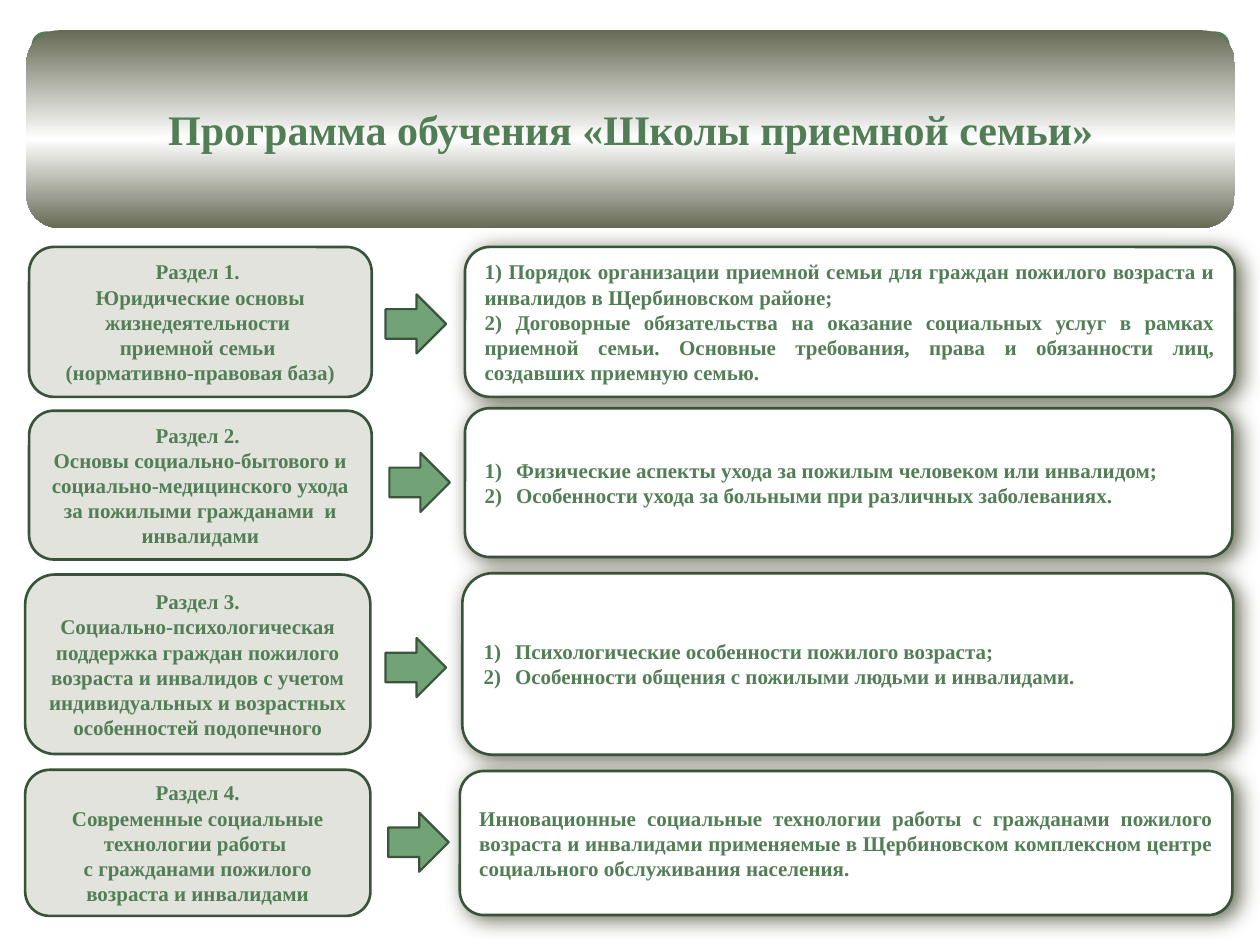
from copy import deepcopy
from lxml import etree
from pptx import Presentation
from pptx.dml.color import RGBColor
from pptx.enum.shapes import MSO_SHAPE
from pptx.enum.text import MSO_ANCHOR, PP_ALIGN
from pptx.oxml.ns import qn
from pptx.util import Pt

ROUND = MSO_SHAPE.ROUNDED_RECTANGLE
ARROW = MSO_SHAPE.RIGHT_ARROW
MIDDLE = MSO_ANCHOR.MIDDLE
CENTER, JUSTIFY = PP_ALIGN.CENTER, PP_ALIGN.JUSTIFY

GREEN = RGBColor(0x52, 0x7E, 0x56)
DARK = RGBColor(0x37, 0x54, 0x39)
EDGE = RGBColor(0x3B, 0x55, 0x3D)
LEAF = RGBColor(0x72, 0xA3, 0x76)
PALE = RGBColor(0xE2, 0xE3, 0xDC)
OLIVE = RGBColor(0x67, 0x6A, 0x55)
WHITE = RGBColor(0xFF, 0xFF, 0xFF)

FONT = "Times New Roman"
BAND = (15.1, 17.3, 690.5, 113)

# Each row: section box and text, arrow corner, topic box and text, numbered or not
ROWS = [
    ((16.6, 141.1, 195.8, 85.7),
     ["Раздел 1. ", "Юридические основы жизнедеятельности ",
      "приемной семьи ", "(нормативно-правовая база)"],
     (220.3, 168.2),
     (265.7, 141.1, 439.9, 85.7),
     ["1) Порядок организации приемной семьи для граждан пожилого возраста "
      "и инвалидов в Щербиновском районе;",
      "2) Договорные обязательства на оказание социальных услуг в рамках "
      "приемной семьи. Основные требования, права и обязанности лиц, "
      "создавших приемную семью."], False),
    ((16.6, 234.7, 195.8, 85),
     ["Раздел 2. ",
      "Основы социально-бытового и социально-медицинского ухода "
      "за пожилыми гражданами  и инвалидами"],
     (222.5, 258.8),
     (265.7, 233.3, 438.5, 85),
     ["Физические аспекты ухода за пожилым человеком или инвалидом;",
      "Особенности ухода за больными при различных заболеваниях."], True),
    ((14.4, 328.3, 197.3, 102.6),
     ["Раздел 3.",
      "Социально-психологическая поддержка граждан пожилого возраста "
      "и инвалидов с учетом индивидуальных и возрастных "
      "особенностей подопечного"],
     (220.3, 364.6),
     (264.2, 327.6, 440.6, 103.7),
     ["Психологические особенности пожилого возраста;",
      "Особенности общения с пожилыми людьми и инвалидами."], True),
    ((14.4, 439.9, 197.3, 83.5),
     ["Раздел 4.", "Современные социальные технологии работы ",
      "с гражданами пожилого возраста и инвалидами"],
     (221.8, 464.4),
     (262.8, 440.6, 441.4, 82.3),
     ["Инновационные социальные технологии работы с гражданами пожилого "
      "возраста и инвалидами применяемые в Щербиновском комплексном центре "
      "социального обслуживания населения."], False),
]

deck = Presentation()
deck.slide_width, deck.slide_height = Pt(720), Pt(540)
slide = deck.slides.add_slide(deck.slide_layouts[5])


def draw(kind, box, fill=None, line=None, width=1.5):
    shape = slide.shapes.add_shape(kind, *map(Pt, box))
    shape.shadow.inherit = False
    if fill is not None:
        shape.fill.solid()
        shape.fill.fore_color.rgb = fill
    if line is None:
        shape.line.fill.background()
    else:
        shape.line.color.rgb = line
        shape.line.width = Pt(width)
    return shape


def write(shape, texts, align, size=12, auto=False):
    """Fill the shape with bold green paragraphs, numbered 1), 2) if auto."""
    frame = shape.text_frame
    frame.word_wrap = True
    frame.vertical_anchor = MIDDLE
    for i, text in enumerate(texts):
        para = frame.add_paragraph() if i else frame.paragraphs[0]
        para.alignment = align
        run = para.add_run()
        run.text = text
        run.font.name = FONT
        run.font.size = Pt(size)
        run.font.bold = True
        run.font.color.rgb = GREEN
        if auto:
            props = para._p.get_or_add_pPr()
            props.set("marL", str(Pt(18)))
            props.set("indent", str(-Pt(18)))
            etree.SubElement(props, qn("a:buFont"), typeface="+mj-lt")
            etree.SubElement(props, qn("a:buAutoNum"), type="arabicParenR")


# Green panel whose top corners show behind the title band
panel = draw(ROUND, (18, 18, 684.7, 72), GREEN)
panel.adjustments[0] = 0.11

band = draw(ROUND, BAND)
band.fill.gradient()
band.fill.gradient_angle = 270
first = band.element.spPr.find(".//" + qn("a:gs"))
first.addnext(deepcopy(first))
shades = [(0, OLIVE), (0.55, WHITE), (1, OLIVE)]
for stop, (place, shade) in zip(band.fill.gradient_stops, shades):
    stop.position = place
    stop.color.rgb = shade

title = slide.shapes.title
title.left, title.top, title.width, title.height = map(Pt, BAND)
write(title, ["Программа обучения «Школы приемной семьи»"], CENTER, 24)
band.element.addnext(title.element)

for left, heads, spot, right, topics, auto in ROWS:
    write(draw(ROUND, left, PALE, DARK), heads, CENTER)
    draw(ARROW, (*spot, 34.6, 33.8), LEAF, EDGE, 1.25)
    card = draw(ROUND, right, WHITE, DARK)
    write(card, topics, JUSTIFY, auto=auto)
    glow = etree.SubElement(
        card.element.spPr.find(qn("a:effectLst")), qn("a:outerShdw"),
        blurRad=str(Pt(12)), dist=str(Pt(3)), dir=str(30 * 60000),
        algn="tl", rotWithShape="0")
    etree.SubElement(glow, qn("a:srgbClr"), val=str(OLIVE))

deck.save("out.pptx")
